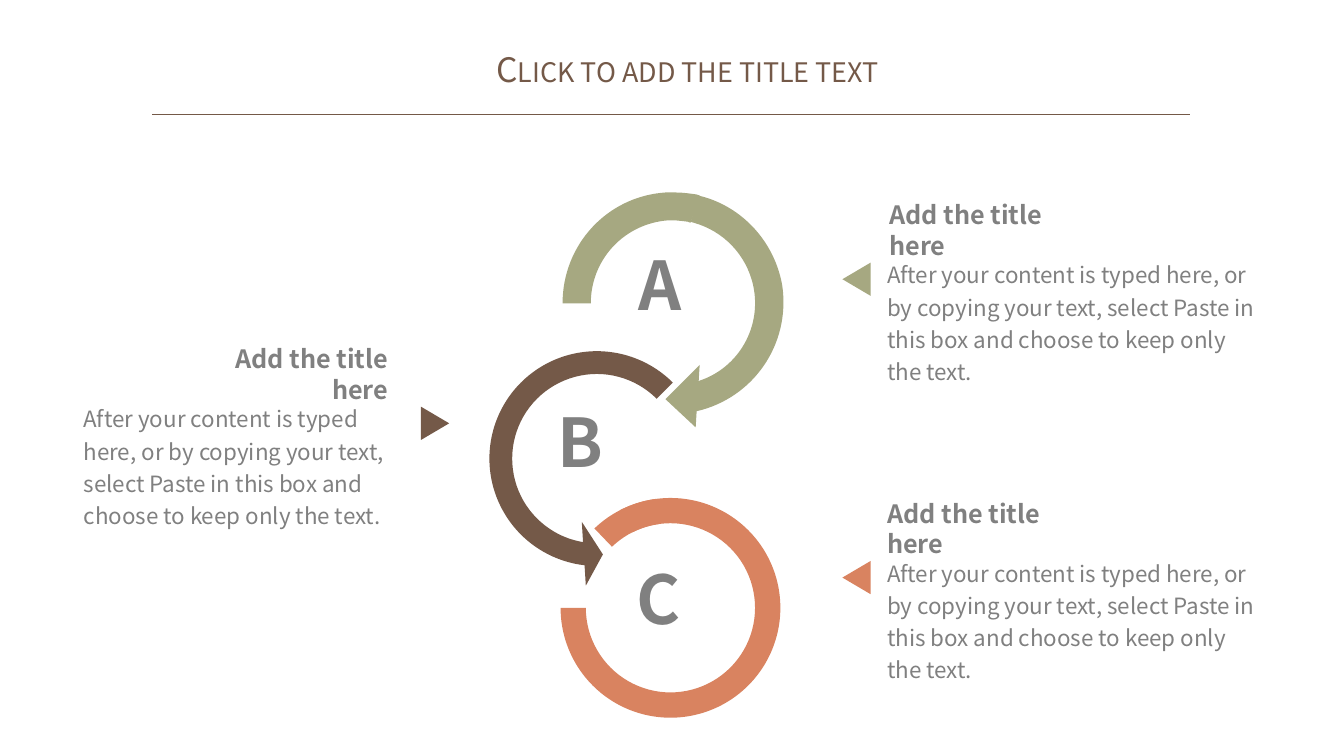
from pptx import Presentation
from pptx.dml.color import RGBColor
from pptx.enum import shapes, text
from pptx.oxml import parse_xml
from pptx.oxml.ns import nsdecls, qn
from pptx.util import Inches, Pt

FONT = "Noto Sans CJK SC"
GREEN, BROWN, ORANGE, GREY = "A6A881", "745948", "D98360", "808080"
HEADING = "Add the title here"
BODY = ("After your content is typed here, or by copying your text, select "
        "Paste in this box and choose to keep only the text.")
LEFT, CENTER, RIGHT = text.PP_ALIGN.LEFT, text.PP_ALIGN.CENTER, text.PP_ALIGN.RIGHT
SHAPE = shapes.MSO_SHAPE


def rgb(color):
    return RGBColor.from_string(color)


def write(sp, content, size, color=GREY, bold=False, align=LEFT, spacing=None,
          wrap=True, side=0.07):
    tf = sp.text_frame
    tf.text = content
    tf.word_wrap = wrap
    tf.auto_size = text.MSO_AUTO_SIZE.SHAPE_TO_FIT_TEXT
    tf.vertical_anchor = text.MSO_ANCHOR.TOP
    tf.margin_left = tf.margin_right = Inches(side)
    tf.margin_top = tf.margin_bottom = Inches(0.04)
    p = tf.paragraphs[0]
    p.alignment = align
    if spacing:
        p.line_spacing = spacing
    font = p.runs[0].font
    font.name, font.size, font.bold = FONT, Pt(size), bold
    font.color.rgb = rgb(color)
    return p.runs[0]


def add_text(slide, box, content, size, **style):
    sp = slide.shapes.add_textbox(*map(Inches, box))
    write(sp, content, size, **style)


def paint(sp, color):
    sp.shadow.inherit = False
    sp.fill.solid()
    sp.fill.fore_color.rgb = rgb(color)
    sp.line.fill.background()


def add_preset(slide, kind, box, color, adjustments=(), rotation=0):
    sp = slide.shapes.add_shape(kind, *map(Inches, box))
    for i, value in enumerate(adjustments):
        sp.adjustments[i] = value
    sp.rotation = rotation
    paint(sp, color)


def angle(degrees):
    """Adjustment value for an angle in degrees."""
    return degrees * 0.6


def add_outline(slide, start, segments, color):
    """Closed outline; a segment is one point, or three for a Bézier curve."""
    def local(point):
        return tuple(Inches(v) for v in point)

    builder = slide.shapes.build_freeform(*local(start))
    builder.add_line_segments([local(pt) for seg in segments for pt in seg], close=True)
    sp = builder.convert_to_shape()
    # Turn each run of three control points into a curve
    lines = iter(list(sp._element.iter(qn("a:lnTo"))))
    for segment in segments:
        group = [next(lines) for _ in segment]
        if len(group) == 3:
            curve = parse_xml(f"<a:cubicBezTo {nsdecls('a')}/>")
            group[0].addprevious(curve)
            for line in group:
                curve.append(line[0])
                line.getparent().remove(line)
    paint(sp, color)


def add_header(slide):
    title = slide.shapes.title
    title.left, title.top, title.width, title.height = map(Inches, (4.58, 0.44, 4.48, 0.48))
    r = write(title, "Click to add the title text", 24, color=BROWN, align=CENTER, side=0.08)
    r.font._element.set("cap", "small")
    rule = slide.shapes.add_connector(
        shapes.MSO_CONNECTOR.STRAIGHT, *map(Inches, (1.51, 1.14, 11.8, 1.14)))
    rule.line.color.rgb = rgb(BROWN)
    rule.line.width = Pt(0.75)
    rule._element.spPr.append(parse_xml(f"<a:effectLst {nsdecls('a')}/>"))


def add_note(slide, heading_at, body_x, body_width, marker_x, color, align=LEFT):
    x, y = heading_at
    add_text(slide, (x, y, 1.67, 0.38), HEADING, 18, bold=True, align=align)
    add_text(slide, (body_x, y + 0.56, body_width, 1.05), BODY, 16, spacing=1.2)
    add_preset(slide, SHAPE.ISOSCELES_TRIANGLE, (marker_x, y + 0.69, 0.33, 0.28), color,
               rotation=90 if align == RIGHT else 270)


def add_rings(slide):
    # B: arrow curving down the left side
    add_preset(slide, SHAPE.LEFT_CIRCULAR_ARROW, (4.65, 3.28, 2.54, 2.54), BROWN,
               (0.089, angle(11.42), angle(97.8), angle(315), 0.125))
    # C: two overlapping arcs
    for start, end in ((226.24, 262.28), (242.85, 180)):
        add_preset(slide, SHAPE.BLOCK_ARC, (5.56, 4.94, 2.18, 2.18), ORANGE,
                   (angle(start), angle(end), 0.115))
    # A: right half with arrowhead, then left half
    add_outline(slide, (6.93, 1.94), [
        [(7, 1.96)],
        [(7.39, 2.08), (7.69, 2.42), (7.76, 2.84)],
        [(7.84, 3.42), (7.47, 3.95), (6.91, 4.08)],
        [(6.9, 4.24)], [(6.6, 3.96)], [(6.94, 3.62)], [(6.93, 3.78)],
        [(7.33, 3.65), (7.56, 3.24), (7.47, 2.83)],
        [(7.4, 2.52), (7.17, 2.29), (6.88, 2.21)],
        [(6.85, 2.2)]], GREEN)
    add_outline(slide, (6.7, 1.91), [
        [(6.77, 1.91), (6.84, 1.92), (6.91, 1.93)],
        [(6.94, 1.94)], [(6.85, 2.21)], [(6.82, 2.2)],
        [(6.74, 2.19), (6.67, 2.18), (6.59, 2.19)],
        [(6.17, 2.24), (5.86, 2.59), (5.86, 3.01)],
        [(5.58, 3.01)],
        [(5.58, 2.43), (6.02, 1.95), (6.6, 1.91)],
        [(6.63, 1.91), (6.67, 1.91), (6.7, 1.91)]], GREEN)
    for letter, x, y, width in (("A", 6.26, 2.37, 0.66), ("B", 5.46, 3.93, 0.61),
                                ("C", 6.24, 5.49, 0.61)):
        add_text(slide, (x, y, width, 0.88), letter, 48, bold=True, wrap=False)


def main():
    prs = Presentation()
    prs.slide_width, prs.slide_height = Inches(13.33), Inches(7.5)
    slide = prs.slides.add_slide(prs.slide_layouts[5])
    add_header(slide)
    add_note(slide, (8.75, 1.94), 8.73, 3.84, 8.33, GREEN)
    add_note(slide, (2.25, 3.37), 0.76, 3.32, 4.15, BROWN, align=RIGHT)
    add_note(slide, (8.73, 4.9), 8.73, 3.84, 8.33, ORANGE)
    add_rings(slide)
    prs.save("out.pptx")


if __name__ == "__main__":
    main()
